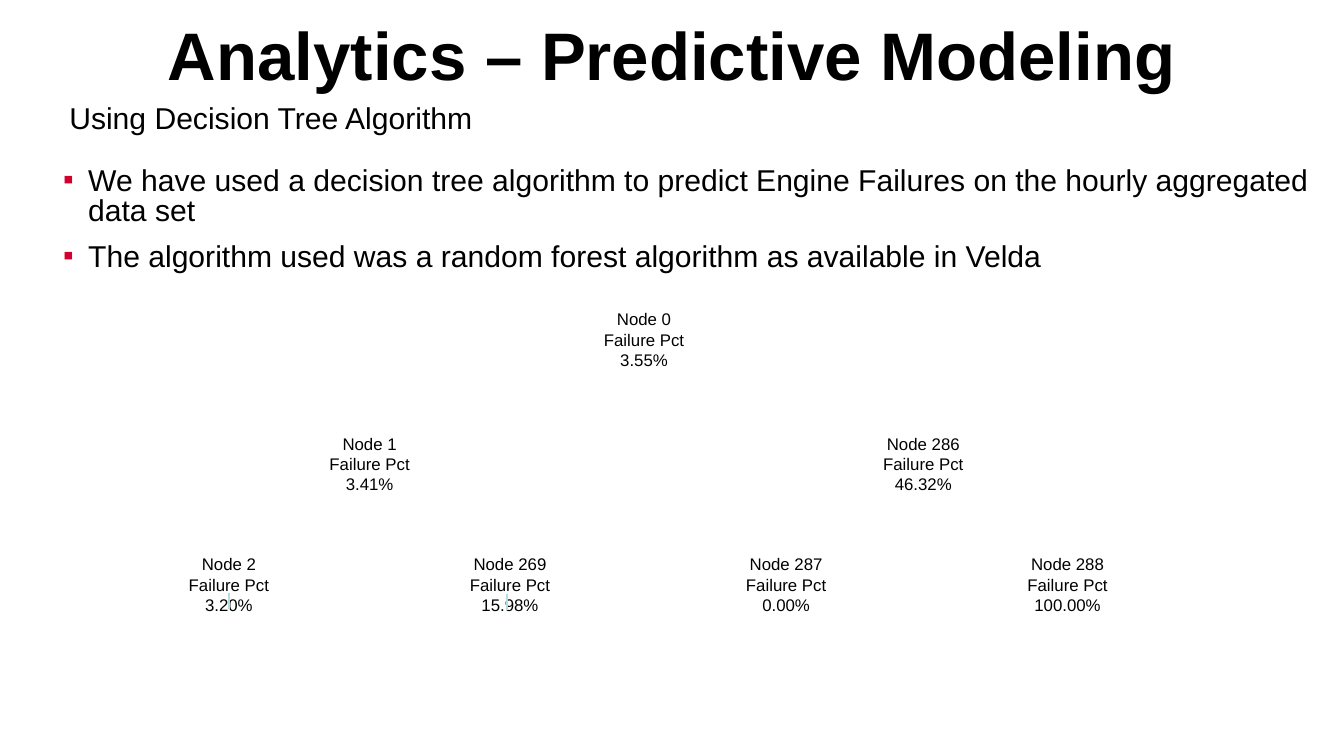
"""Builds the decision tree slide on predictive modeling."""
from lxml import etree
from pptx import Presentation
from pptx import util as u
from pptx.dml.color import RGBColor
from pptx.enum import shapes, text
from pptx.oxml import ns

COLORS = {"ink": "000000", "bullet": "D3002D", "branch": "B6DCDF"}


class TreeSlide:
    """Holds the style and the current slide."""

    font = "Arial"
    body_size = 43
    node_size = 24
    node_height = 94

    def __init__(self, deck):
        self.slide = deck.slides.add_slide(deck.slide_layouts[3])

    def place(self, holder, box, inset, anchor):
        holder.left, holder.top, holder.width, holder.height = map(u.Pt, box)
        frame = holder.text_frame
        frame.word_wrap = True
        frame.auto_size = text.MSO_AUTO_SIZE.NONE
        frame.vertical_anchor = anchor
        frame.margin_left = frame.margin_right = u.Pt(inset)
        frame.margin_top = frame.margin_bottom = u.Pt(inset)
        return frame

    def add_words(self, paragraph, words, size, align, bold=False):
        paragraph.alignment = align
        run = paragraph.add_run()
        run.text = words
        run.font.name = self.font
        run.font.size = u.Pt(size)
        run.font.bold = bold
        run.font.color.rgb = RGBColor.from_string(COLORS["ink"])

    def paragraphs(self, frame, lines):
        for index, line in enumerate(lines):
            yield frame.add_paragraph() if index else frame.paragraphs[0], line

    def title(self, words, box):
        frame = self.place(self.slide.shapes.title, box, 3, text.MSO_ANCHOR.BOTTOM)
        self.add_words(frame.paragraphs[0], words, 96, text.PP_ALIGN.CENTER, True)

    def body(self, position, lines, box, inset, bulleted):
        holder = self.slide.placeholders[position]
        frame = self.place(holder, box, inset, text.MSO_ANCHOR.TOP)
        for index, (paragraph, line) in enumerate(self.paragraphs(frame, lines)):
            self.bullet(paragraph, bulleted)
            paragraph.line_spacing = 0.85
            paragraph.space_before = u.Pt(21 if index else 0)
            self.add_words(paragraph, line, self.body_size, text.PP_ALIGN.LEFT)

    def bullet(self, paragraph, shown):
        props = paragraph._p.get_or_add_pPr()
        indent = u.Pt(36 if shown else 0)
        props.set("marL", str(indent))
        props.set("indent", str(-indent))
        if not shown:
            etree.SubElement(props, ns.qn("a:buNone"))
            return
        tint = etree.SubElement(props, ns.qn("a:buClr"))
        etree.SubElement(tint, ns.qn("a:srgbClr"), val=COLORS["bullet"])
        etree.SubElement(props, ns.qn("a:buFont"), typeface=self.font)
        etree.SubElement(props, ns.qn("a:buChar"), char="▪")

    def node(self, number, percent, center, top, width=310):
        label = self.slide.shapes.add_textbox(
            *map(u.Pt, (center - width / 2, top, width, self.node_height)))
        frame = label.text_frame
        frame.word_wrap = True
        lines = (f"Node {number}", "Failure Pct", percent)
        for paragraph, line in self.paragraphs(frame, lines):
            self.add_words(paragraph, line, self.node_size, text.PP_ALIGN.CENTER)

    def branch(self, x, top, length=23):
        stub = self.slide.shapes.add_connector(
            shapes.MSO_CONNECTOR.STRAIGHT, *map(u.Pt, (x, top, x, top + length)))
        stub.line.color.rgb = RGBColor.from_string(COLORS["branch"])
        stub.line.width = u.Pt(2)
        etree.SubElement(stub._element.spPr, ns.qn("a:effectLst"))


def main():
    deck = Presentation()
    deck.slide_width, deck.slide_height = u.Pt(1920), u.Pt(1080)
    page = TreeSlide(deck)
    page.title("Analytics – Predictive Modeling", (96, 27.5, 1728, 110))
    page.body(1, ["Using Decision Tree Algorithm"], (96, 147.5, 1728, 74), 3, False)
    page.body(2, [
        "We have used a decision tree algorithm to predict Engine Failures "
        "on the hourly aggregated data set",
        "The algorithm used was a random forest algorithm as available in Velda",
    ], (90, 238, 1806, 684), 0, True)

    page.node(0, "3.55%", 920, 438, 256)
    children = [(1, "3.41%", 528), (286, "46.32%", 1319)]
    leaves = [(2, "3.20%", 327), (269, "15.98%", 728.5),
              (287, "0.00%", 1123), (288, "100.00%", 1525)]
    for top, level in ((616, children), (788, leaves)):
        for number, percent, center in level:
            page.node(number, percent, center, top)
    for x, top in ((327, 847), (724.5, 848)):
        page.branch(x, top)
    deck.save("out.pptx")


if __name__ == "__main__":
    main()
